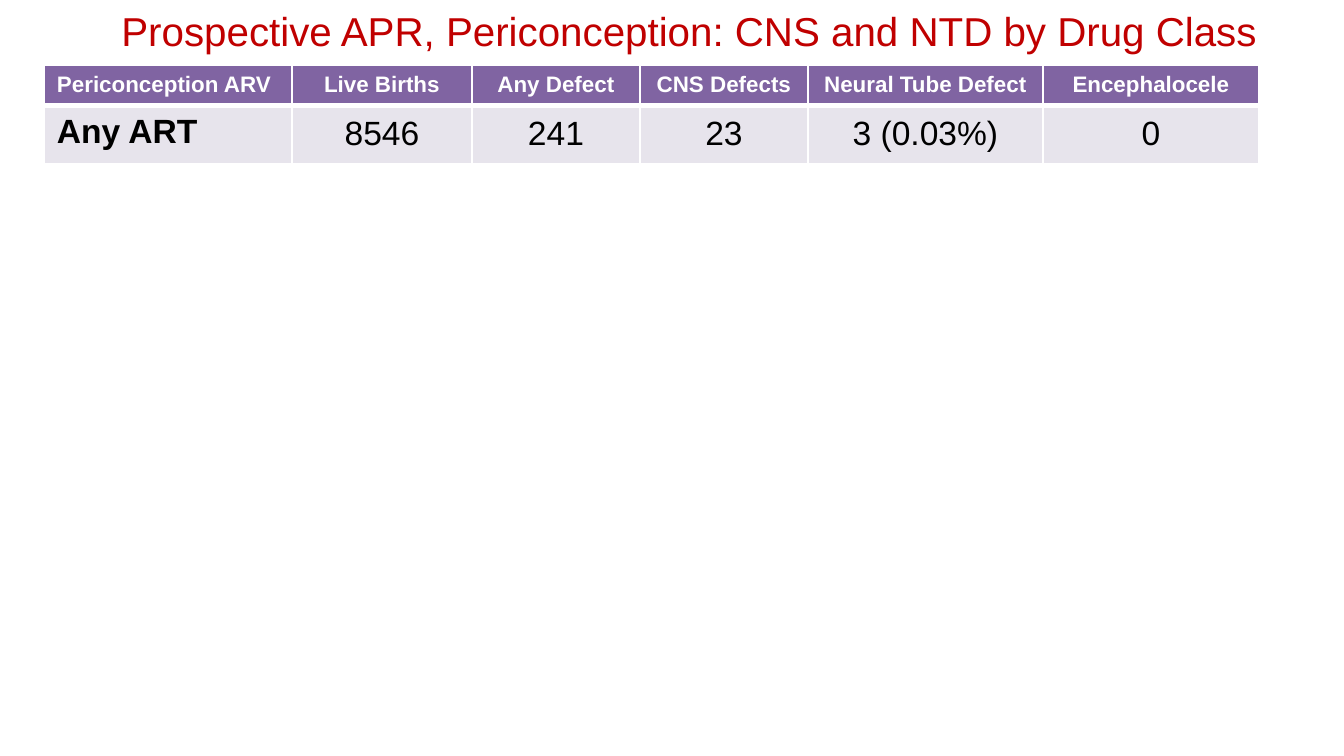
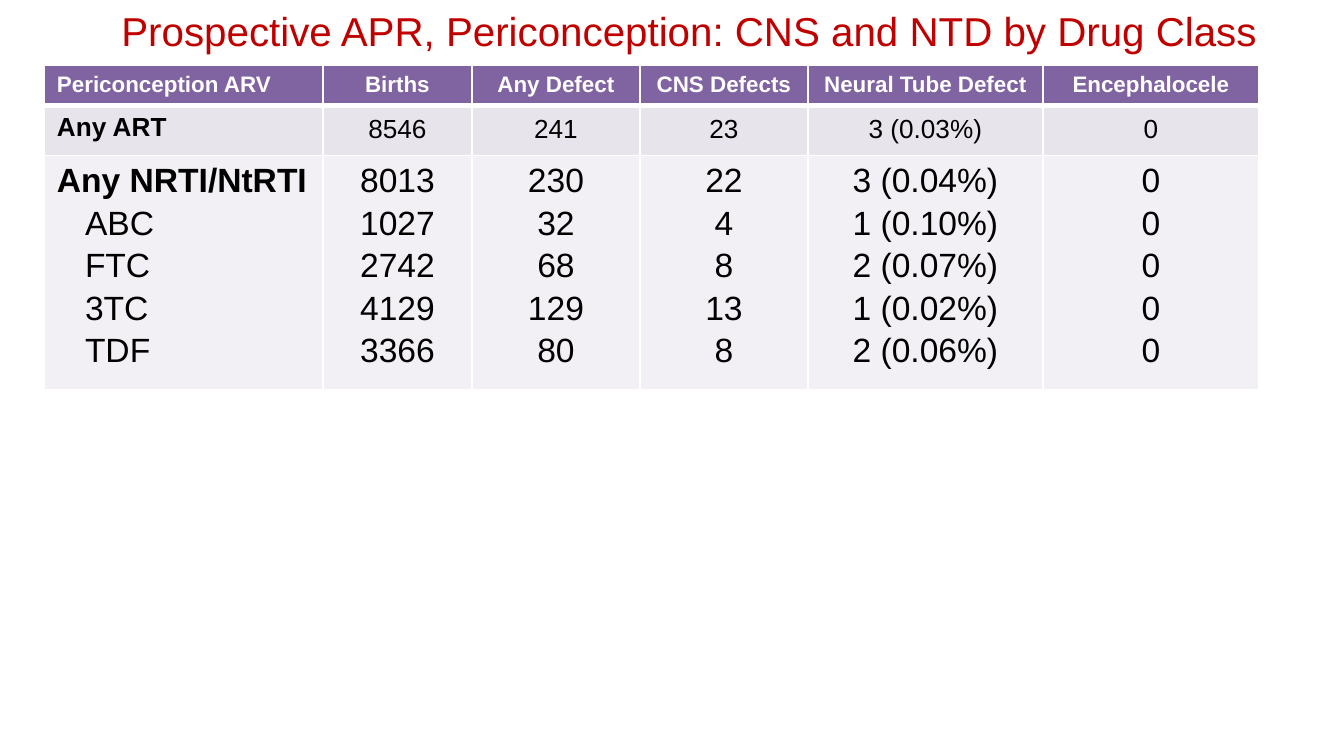
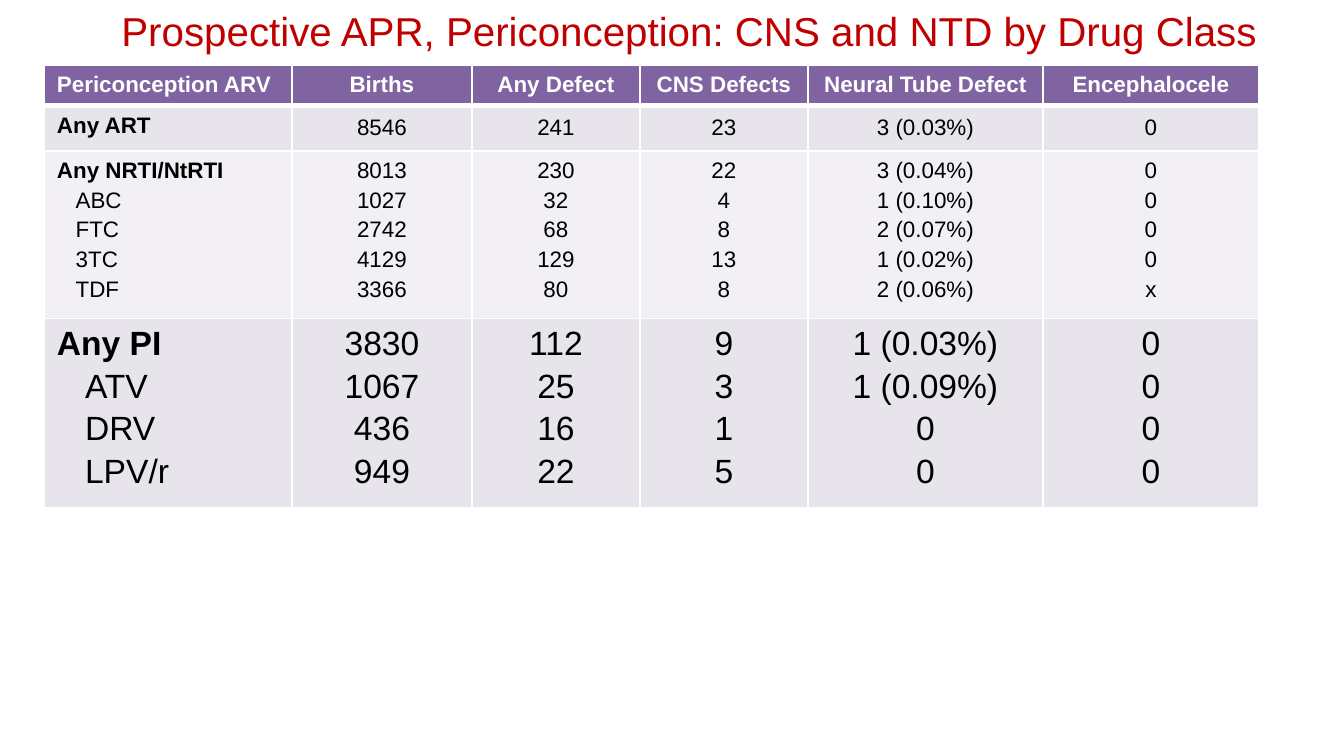
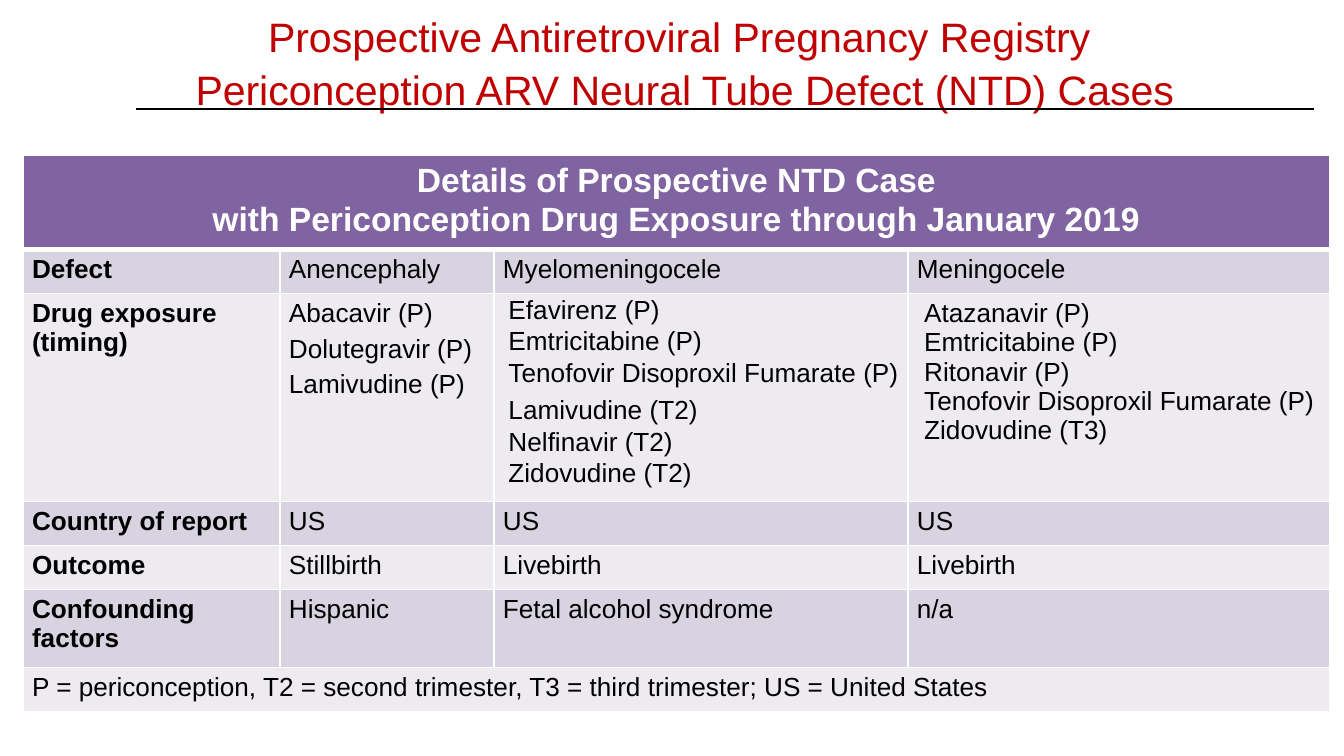
from lxml.etree import SubElement
from pptx import Presentation
from pptx.dml.color import RGBColor
from pptx.enum.shapes import MSO_CONNECTOR
from pptx.enum.text import MSO_ANCHOR, PP_ALIGN
from pptx.oxml import parse_xml
from pptx.oxml.ns import nsdecls, qn
from pptx.util import Emu, Pt

# Shared look
SCALE = 914400 / 134.4
FONT = "Arial"
RED, PURPLE, WHITE, BLACK = "C00000", "8064A2", "FFFFFF", "000000"
CLASS_BANDS = ("E7E4EC", "F2F0F4")
CASE_BANDS = ("D8D3E0", "EDEAF0")
SPACE_WIDTH = 0.278  # of the text size
LEFT, CENTER = PP_ALIGN.LEFT, PP_ALIGN.CENTER

# Drug class slides
CLASS_TITLE = "Prospective APR, Periconception: CNS and NTD by Drug Class"
DEFECT_HEADS = ["Any Defect", "CNS Defects", "Neural Tube Defect", "Encephalocele"]
DEFECT_WIDTHS = [168, 168, 235, 216]
ART = [("Any ART", "8546", "241", "23", "3 (0.03%)", "0")]
NRTI = [
    ("Any NRTI/NtRTI", "8013", "230", "22", "3 (0.04%)", "0"),
    ("ABC", "1027", "32", "4", "1 (0.10%)", "0"),
    ("FTC", "2742", "68", "8", "2 (0.07%)", "0"),
    ("3TC", "4129", "129", "13", "1 (0.02%)", "0"),
    ("TDF", "3366", "80", "8", "2 (0.06%)", "0"),
]
NRTI_MARKED = NRTI[:-1] + [NRTI[-1][:-1] + ("x",)]
PI = [
    ("Any PI", "3830", "112", "9", "1 (0.03%)", "0"),
    ("ATV", "1067", "25", "3", "1 (0.09%)", "0"),
    ("DRV", "436", "16", "1", "0", "0"),
    ("LPV/r", "949", "22", "5", "0", "0"),
]
# Births heading, first two column widths, then (drug rows, text size, row height)
CLASS_SLIDES = [
    ("Live Births", [248, 180], [(ART, 18, 54)]),
    ("Births", [279, 149], [(ART, 14, 46), (NRTI, 18, 224)]),
    ("Births", [248, 180], [(ART, 12, 42), (NRTI_MARKED, 12, 161), (PI, 18, 180)]),
]

# Case slide
CASE_TITLE = ["Prospective Antiretroviral Pregnancy Registry ",
              "Periconception ARV Neural Tube Defect (NTD) Cases"]
CASE_HEAD = ["Details of Prospective NTD Case",
             "with Periconception Drug Exposure through January 2019"]
CASE_WIDTHS = [257, 214, 414, 422]
CASE_HEIGHTS = [81, 44, 208, 44, 44, 78, 44]
CASE_ROWS = [
    ("Defect", ["Anencephaly"], ["Myelomeningocele"], ["Meningocele"]),
    ("Drug exposure (timing)",
     ["Abacavir (P)", "Dolutegravir (P)", "Lamivudine (P)"],
     ["Efavirenz (P)\nEmtricitabine (P)\nTenofovir Disoproxil Fumarate (P)",
      "Lamivudine (T2)\nNelfinavir (T2)\nZidovudine (T2)"],
     ["Atazanavir (P)\nEmtricitabine (P)\nRitonavir (P)\n"
      "Tenofovir Disoproxil Fumarate (P)\nZidovudine (T3)"]),
    ("Country of report", ["US"], ["US"], ["US"]),
    ("Outcome", ["Stillbirth"], ["Livebirth"], ["Livebirth"]),
    ("Confounding factors", ["Hispanic"], ["Fetal alcohol syndrome"], ["n/a"]),
]
CASE_NOTE = ("P = periconception, T2 = second trimester, T3 = third trimester; "
             "US = United States")


def px(n):
    return Emu(round(n * SCALE))


def rgb(colour):
    return RGBColor.from_string(colour)


def write(tf, paras, size, colour, align=LEFT, bold=(), gaps=None, spacing=None, indents=()):
    """bold holds paragraph numbers; indents holds space widths per paragraph."""
    for i, text in enumerate(paras):
        p = tf.paragraphs[0] if i == 0 else tf.add_paragraph()
        p.alignment = align
        if gaps:
            p.space_before, p.space_after = Pt(gaps[0]), Pt(gaps[1])
        if spacing:
            p.line_spacing = spacing
        if indents and indents[i]:
            pPr = p._p.get_or_add_pPr()
            pPr.set("marL", str(Pt(indents[i] * SPACE_WIDTH * size)))
            pPr.set("indent", "0")
        for j, line in enumerate(text.split("\n")):
            if j:
                p.add_line_break()
            r = p.add_run()
            r.text = line
            r.font.name, r.font.size, r.font.bold = FONT, Pt(size), i in bold
            r.font.color.rgb = rgb(colour)


def add_title(s, box, paras, size, anchor, inset, spacing=None):
    tf = s.shapes.add_textbox(*map(px, box)).text_frame
    tf.word_wrap = True
    tf.vertical_anchor = anchor
    tf.margin_left = tf.margin_right = tf.margin_top = tf.margin_bottom = px(inset)
    write(tf, paras, size, RED, CENTER, spacing=spacing)


def set_insets(cell, x, y):
    cell.margin_left = cell.margin_right = px(x)
    cell.margin_top = cell.margin_bottom = px(y)


def add_table(s, left, top, widths, heights, bands, insets):
    """Empty table with a purple head, banded rows and white rules."""
    table = s.shapes.add_table(len(heights), len(widths), px(left), px(top),
                               px(sum(widths)), px(sum(heights))).table
    table.first_row = table.horz_banding = False
    for column, w in zip(table.columns, widths):
        column.width = px(w)
    for i, (row, h) in enumerate(zip(table.rows, heights)):
        row.height = px(h)
        for cell in row.cells:
            set_insets(cell, *insets)
            cell.fill.solid()
            cell.fill.fore_color.rgb = rgb(bands[(i - 1) % 2] if i else PURPLE)
            tcPr = cell._tc.get_or_add_tcPr()
            for k, side in enumerate("LRTB"):
                thick = (side == "B" and i == 0) or (side == "T" and i == 1)
                tcPr.insert(k, parse_xml(
                    f'<a:ln{side} {nsdecls("a")} w="{Pt(3 if thick else 1)}"><a:solidFill>'
                    f'<a:srgbClr val="{WHITE}"/></a:solidFill></a:ln{side}>'))
    return table


def class_slide(prs, births, widths, groups):
    s = prs.slides.add_slide(prs.slide_layouts[6])
    add_title(s, (63, -12, 1253, 85), [CLASS_TITLE], 21.6, MSO_ANCHOR.MIDDLE, 0)
    heights = [39] + [h for _, _, h in groups]
    table = add_table(s, 44, 65, widths + DEFECT_WIDTHS, heights, CLASS_BANDS, (13, 7))
    gaps = (1.6, 1)
    for c, head in enumerate(["Periconception ARV", births] + DEFECT_HEADS):
        write(table.cell(0, c).text_frame, [head], 12, WHITE,
              CENTER if c else LEFT, bold=[0], gaps=gaps)
    for i, (drugs, size, _) in enumerate(groups, 1):
        for c, values in enumerate(zip(*drugs)):
            cell = table.cell(i, c)
            if c == 0:
                write(cell.text_frame, values, size, BLACK, bold=[0], gaps=gaps,
                      indents=[0] + [3] * (len(values) - 1))
            else:
                if drugs is ART:
                    set_insets(cell, 17, 9)
                write(cell.text_frame, values, size, BLACK, CENTER, gaps=gaps)


def case_slide(prs):
    s = prs.slides.add_slide(prs.slide_layouts[6])
    table = add_table(s, 23, 155, CASE_WIDTHS, CASE_HEIGHTS, CASE_BANDS, (9, 5))
    last_row, last_col = len(CASE_HEIGHTS) - 1, len(CASE_WIDTHS) - 1
    for i in (0, last_row):
        table.cell(i, 0).merge(table.cell(i, last_col))
    write(table.cell(0, 0).text_frame, CASE_HEAD, 18, WHITE, CENTER, bold=[0, 1], spacing=1.05)
    gaps = (1.7, 1.7)
    for i, (label, *cases) in enumerate(CASE_ROWS, 1):
        write(table.cell(i, 0).text_frame, [label], 14, BLACK, bold=[0], gaps=gaps)
        for c, paras in enumerate(cases, 1):
            cell, spacing, indent = table.cell(i, c), None, 0
            if "\n" in paras[0]:  # long drug lists are set in a little
                indent = 2 if c == 2 else 1
                if c == 2:
                    set_insets(cell, 0, 0)
                    spacing = 1.07
            write(cell.text_frame, paras, 14, BLACK, gaps=gaps, spacing=spacing,
                  indents=[indent] * len(paras))
    write(table.cell(last_row, 0).text_frame, [CASE_NOTE], 14, BLACK, gaps=gaps)

    # Title and the rule under it
    add_title(s, (56, -4, 1258, 134), CASE_TITLE, 22, MSO_ANCHOR.TOP, 13, 1.06)
    rule = s.shapes.add_connector(MSO_CONNECTOR.STRAIGHT, px(136), px(109), px(1314), px(109))
    rule.line.color.rgb = rgb(BLACK)
    rule.line.width = Pt(0.75)
    SubElement(rule._element.spPr, qn("a:effectLst"))


def main():
    prs = Presentation()
    prs.slide_width, prs.slide_height = px(1344), px(756)
    for births, widths, groups in CLASS_SLIDES:
        class_slide(prs, births, widths, groups)
    case_slide(prs)
    prs.save("out.pptx")


if __name__ == "__main__":
    main()
